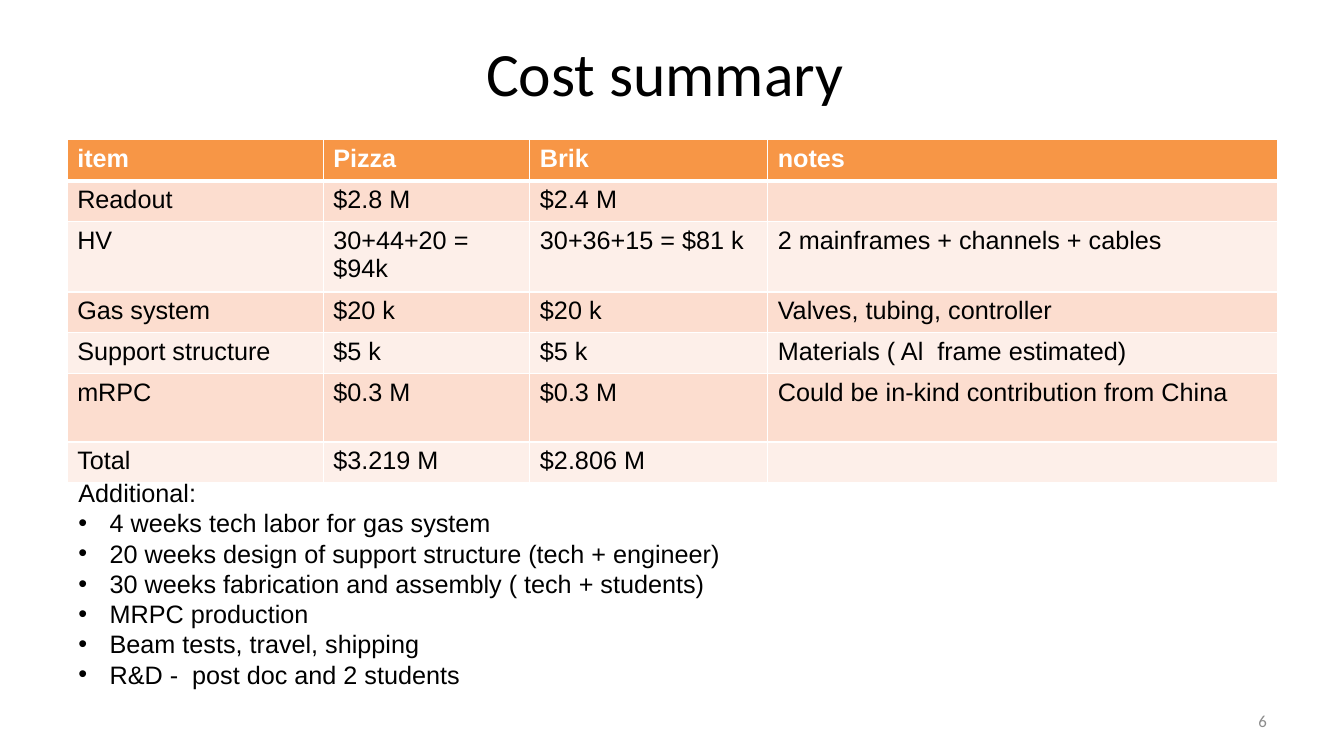
from pptx import Presentation
from pptx.dml.color import RGBColor as Rgb
from pptx.enum.text import MSO_ANCHOR as Anchor, PP_ALIGN as Align
from pptx.oxml import parse_xml
from pptx.oxml.ns import nsdecls
from pptx.util import Inches, Pt

HUES = {"ink": "000000", "paper": "FFFFFF", "head": "F79646",
        "dark": "FCDDCF", "light": "FDEFE9", "gray": "8C8C8C"}
COLS = [19.05, 15.38, 17.7, 37.95]
LOW, TALL = 5.4, 9.05
ROWS = [
    (LOW, ["item", "Pizza", "Brik", "notes"]),
    (LOW, ["Readout", "$2.8 M", "$2.4 M", ""]),
    (TALL, ["HV", "30+44+20 = $94k", "30+36+15 = $81 k",
            "2 mainframes + channels + cables"]),
    (LOW, ["Gas system", "$20 k", "$20 k", "Valves, tubing, controller"]),
    (LOW, ["Support structure", "$5 k", "$5 k",
           "Materials ( Al  frame estimated)"]),
    (TALL, ["mRPC", "$0.3 M", "$0.3 M",
            "Could be in-kind contribution from China"]),
    (LOW, ["Total", "$3.219 M", "$2.806 M", ""]),
]
NOTES = ["4 weeks tech labor for gas system",
         "20 weeks design of support structure (tech + engineer)",
         "30 weeks fabrication and assembly ( tech + students)",
         "MRPC production",
         "Beam tests, travel, shipping",
         "R&D -  post doc and 2 students"]


class Deck:
    """Draws styled parts on a slide, placed in percent of its size."""

    def __init__(self):
        self.prs = Presentation()
        self.prs.slide_width = Inches(13.33)
        self.prs.slide_height = Inches(7.5)
        self.slide = self.prs.slides.add_slide(self.prs.slide_layouts[6])

    def wide(self, part):
        return int(self.prs.slide_width * part / 100)

    def high(self, part):
        return int(self.prs.slide_height * part / 100)

    def area(self, x, y, w, h):
        return self.wide(x), self.high(y), self.wide(w), self.high(h)

    def style(self, para, size, face, hue, bold=False):
        for run in para.runs:
            run.font.size = Pt(size)
            run.font.name = face
            run.font.bold = bold
            run.font.color.rgb = Rgb.from_string(HUES[hue])

    def text(self, box, words, size, face, hue="ink", align=Align.LEFT,
             anchor=Anchor.TOP):
        frame = self.slide.shapes.add_textbox(*self.area(*box)).text_frame
        frame.word_wrap = True
        frame.vertical_anchor = anchor
        frame.text = words
        for para in frame.paragraphs:
            para.alignment = align
            self.style(para, size, face, hue)
        return frame

    def bullet(self, para, indent):
        prop = para._p.get_or_add_pPr()
        prop.set("marL", str(indent))
        prop.set("indent", str(-indent))
        prop.append(parse_xml(f'<a:buFont {nsdecls("a")} typeface="Arial"/>'))
        prop.append(parse_xml(f'<a:buChar {nsdecls("a")} char="•"/>'))

    def edge(self, cell, row):
        prop = cell._tc.get_or_add_tcPr()
        widths = {"L": 1, "R": 1, "T": 3 if row == 1 else 1,
                  "B": 3 if row == 0 else 1}
        for spot, (side, size) in enumerate(widths.items()):
            prop.insert(spot, parse_xml(
                f'<a:ln{side} {nsdecls("a")} w="{Pt(size)}"><a:solidFill>'
                f'<a:srgbClr val="{HUES["paper"]}"/></a:solidFill></a:ln{side}>'))

    def table(self, x, y, cols, rows):
        box = self.area(x, y, sum(cols), sum(tall for tall, _ in rows))
        grid = self.slide.shapes.add_table(len(rows), len(cols), *box).table
        grid.horz_banding = False
        for col, part in zip(grid.columns, cols):
            col.width = self.wide(part)
        for r, (tall, words) in enumerate(rows):
            grid.rows[r].height = self.high(tall)
            fill = "head" if r == 0 else "dark" if r % 2 else "light"
            for c, word in enumerate(words):
                cell = grid.cell(r, c)
                cell.text_frame.text = word
                self.style(cell.text_frame.paragraphs[0], 18, "Arial",
                           "ink" if r else "paper", r == 0)
                cell.fill.solid()
                cell.fill.fore_color.rgb = Rgb.from_string(HUES[fill])
                self.edge(cell, r)


def main():
    deck = Deck()
    deck.text((5, 4, 90, 16.7), "Cost summary ", 44, "Calibri",
              align=Align.CENTER)
    deck.table(5, 18.5, COLS, ROWS)
    deck.text((71.7, 92.7, 23.3, 5.3), "6", 12, "Calibri", "gray",
              Align.RIGHT, Anchor.MIDDLE)
    frame = deck.text((5.1, 62.5, 49.7, 29.6),
                      "\n".join(["Additional:"] + NOTES), 18, "Arial")
    for para in frame.paragraphs[1:]:
        deck.bullet(para, Inches(0.31))
    deck.prs.save("out.pptx")


if __name__ == "__main__":
    main()
